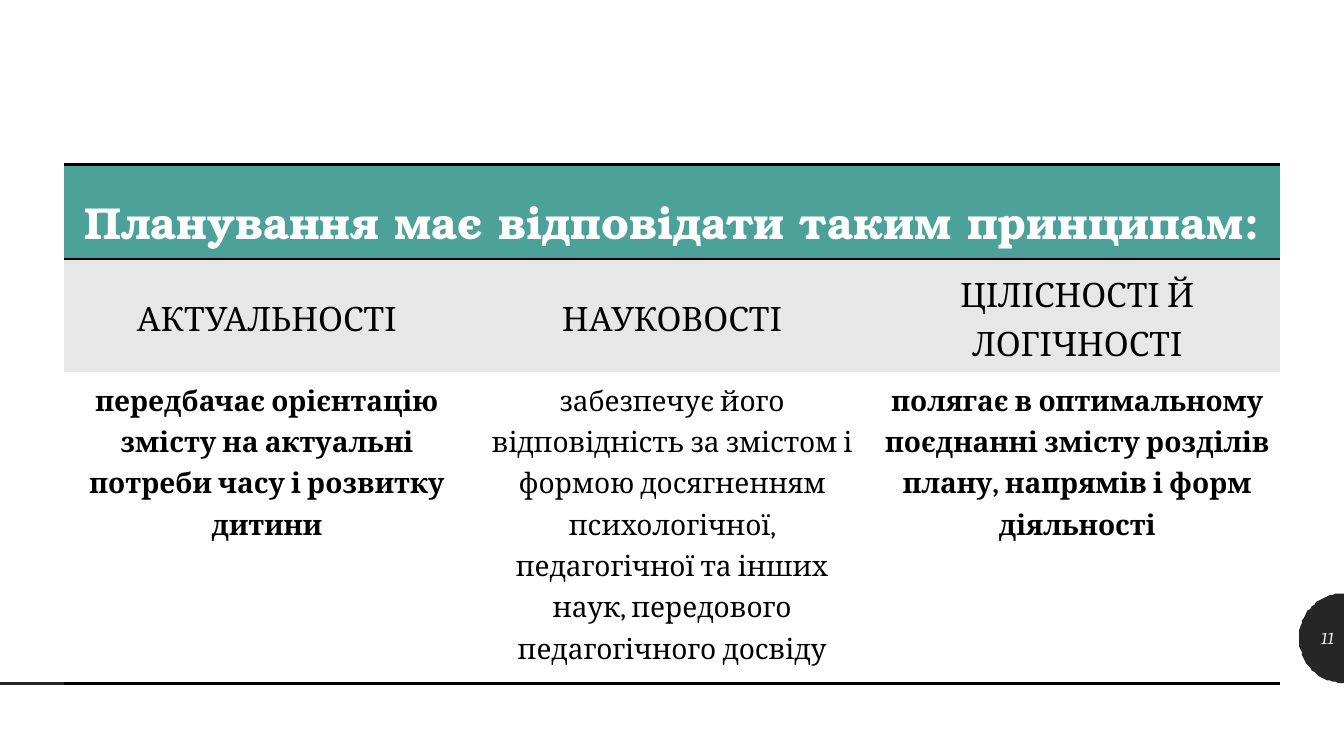
import math

import lxml.etree
import pptx
import pptx.dml.color
import pptx.enum.text
import pptx.oxml.ns
import pptx.util

Pt = pptx.util.Pt
qn = pptx.oxml.ns.qn
NO_STYLE = "{2D5ABB26-0587-4C30-8999-92F81FD0307C}"
HEADER = "Планування має відповідати таким принципам:"
PRINCIPLES = [
    ("АКТУАЛЬНОСТІ",
     "передбачає орієнтацію змісту на актуальні потреби часу і розвитку дитини", True),
    ("НАУКОВОСТІ",
     "забезпечує його відповідність за змістом і формою досягненням психологічної, "
     "педагогічної та інших наук, передового педагогічного досвіду", False),
    ("ЦІЛІСНОСТІ Й ЛОГІЧНОСТІ",
     "полягає в оптимальному поєднанні змісту розділів плану, напрямів і форм діяльності", True),
]


def rgb(value):
    """Turn a hex string into a colour."""
    return pptx.dml.color.RGBColor.from_string(value)


def format_text(tf, size, font, color, align, bold=False, italic=False):
    """Format every run of a text frame."""
    for p in tf.paragraphs:
        p.alignment = align
        for r in p.runs:
            r.font.size, r.font.name = Pt(size), font
            r.font.bold, r.font.italic = bold, italic
            r.font.color.rgb = rgb(color)


def add_badge(s, cx, cy, radius, color):
    """Draw a half disc open to the right."""
    arc = [(cx - radius * math.sin(math.pi * i / 48), cy - radius * math.cos(math.pi * i / 48))
           for i in range(49)]
    fb = s.shapes.build_freeform(arc[0][0], arc[0][1], scale=Pt(1))
    fb.add_line_segments(arc[1:], close=True)
    sp = fb.convert_to_shape()
    sp.shadow.inherit = False
    sp.fill.solid()
    sp.fill.fore_color.rgb = rgb(color)
    sp.line.fill.background()


def add_line(s, x1, y1, x2, y2, color, width):
    """Draw a straight line without a shadow."""
    line = s.shapes.add_connector(pptx.enum.shapes.MSO_CONNECTOR.STRAIGHT,
                                  Pt(x1), Pt(y1), Pt(x2), Pt(y2))
    line.line.color.rgb = rgb(color)
    line.line.width = Pt(width)
    lxml.etree.SubElement(line._element.spPr, qn("a:effectLst"))


def add_number(s, text, x, y, w, h):
    """Add the slide number."""
    tf = s.shapes.add_textbox(Pt(x), Pt(y), Pt(w), Pt(h)).text_frame
    tf.word_wrap = True
    tf.vertical_anchor = pptx.enum.text.MSO_ANCHOR.MIDDLE
    tf.text = text
    format_text(tf, 12, "Cambria", "F5F5F5", pptx.enum.text.PP_ALIGN.RIGHT, italic=True)


def set_border(cell, side, color, width):
    """Rule one side of a cell."""
    ln = lxml.etree.Element(qn("a:" + side), w=str(Pt(width)))
    fill = lxml.etree.SubElement(ln, qn("a:solidFill"))
    lxml.etree.SubElement(fill, qn("a:srgbClr"), val=color)
    cell._tc.get_or_add_tcPr().insert(0, ln)


def fill_cell(cell, text, size, fill, font="Cambria", color="000000", bold=False, middle=False):
    """Write and colour one table cell."""
    tf = cell.text_frame
    tf.text = text
    format_text(tf, size, font, color, pptx.enum.text.PP_ALIGN.CENTER, bold)
    tf.paragraphs[0].line_spacing = 1.28
    if middle:
        cell.vertical_anchor = pptx.enum.text.MSO_ANCHOR.MIDDLE
    cell.fill.solid()
    cell.fill.fore_color.rgb = rgb(fill)


def add_principles_table(s, x, y, w, heights):
    """Add the table of planning principles."""
    frame = s.shapes.add_table(3, len(PRINCIPLES), Pt(x), Pt(y), Pt(w), Pt(sum(heights)))
    table = frame.table
    table.horz_banding = False
    table._tbl.tblPr.find(qn("a:tableStyleId")).text = NO_STYLE
    for row, height in zip(table.rows, heights):
        row.height = Pt(height)
    table.cell(0, 0).merge(table.cell(0, len(PRINCIPLES) - 1))
    fill_cell(table.cell(0, 0), HEADER, 32, "4CA198", "TeX Gyre Bonum", "FFFFFF", True)
    for col, (name, meaning, bold) in enumerate(PRINCIPLES):
        fill_cell(table.cell(1, col), name, 24, "E7E7E7", middle=True)
        fill_cell(table.cell(2, col), meaning, 20, "FFFFFF", bold=bold)
        for row, side in ((0, "lnB"), (0, "lnT"), (2, "lnB")):
            set_border(table.cell(row, col), side, "000000", 2)


def main():
    """Build the slide and save it."""
    prs = pptx.Presentation()
    prs.slide_width, prs.slide_height = Pt(960), Pt(540)
    s = prs.slides.add_slide(prs.slide_layouts[6])
    add_badge(s, 960, 455.8, 32.2, "262626")
    add_line(s, 0, 488.3, 354.3, 488.3, "262626", 2)
    add_number(s, "11", 927.8, 441.4, 32.2, 28.8)
    add_principles_table(s, 45.9, 117.4, 868.4, (67.5, 77, 213.5))
    prs.save("out.pptx")


if __name__ == "__main__":
    main()
